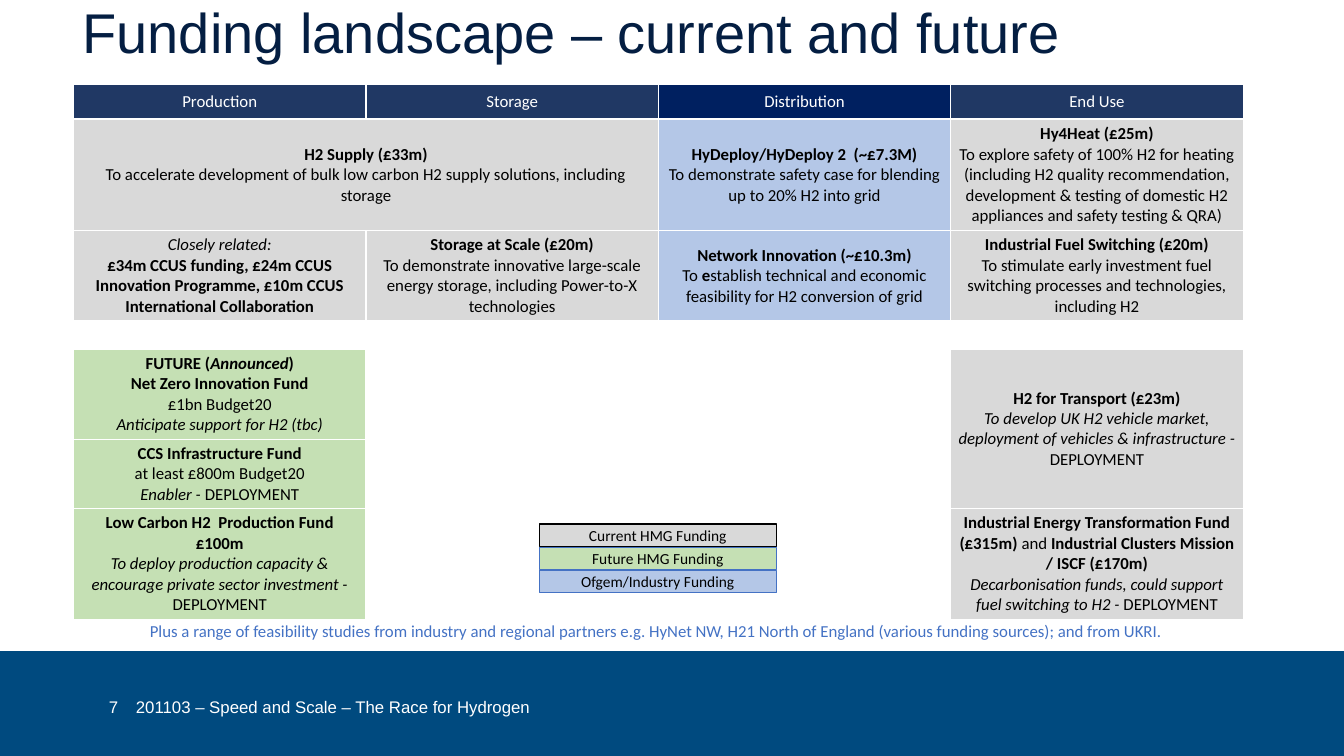
from dataclasses import dataclass
from typing import NamedTuple

from lxml import etree
from pptx import Presentation
from pptx.dml import color
from pptx.enum import shapes, text
from pptx.oxml import ns
from pptx import util as u


@dataclass(frozen=True)
class Theme:
    """Colours, fonts and type sizes of the slide."""
    white: str = "FFFFFF"
    black: str = "000000"
    title: str = "041E42"
    footer: str = "004A7F"
    header: str = "203864"
    header_dark: str = "002060"
    current: str = "D9D9D9"
    future: str = "C5E0B4"
    industry: str = "B4C7E7"
    accent: str = "4472C4"
    heading_font: str = "Arial"
    body_font: str = "Calibri"
    title_size: float = 40
    body_size: float = 12
    legend_size: float = 11


class Span(NamedTuple):
    """A stretch of text in one style."""
    words: str
    bold: bool = False
    italic: bool = False


class Style(NamedTuple):
    """Type settings shared by all text in one box."""
    font: str
    size: float
    colour: str
    align: text.PP_ALIGN = text.PP_ALIGN.CENTER
    anchor: text.MSO_ANCHOR = text.MSO_ANCHOR.MIDDLE


class Area(NamedTuple):
    """Left, top, width and height in inches."""
    left: float
    top: float
    width: float
    height: float


@dataclass(frozen=True)
class Fund:
    """A filled table cell with its paragraphs and spans."""
    row: int
    column: int
    fill: str
    paras: list[list[Span]]
    anchor: text.MSO_ANCHOR = text.MSO_ANCHOR.MIDDLE


class Label(NamedTuple):
    """A line of text outside the table."""
    words: str
    area: Area
    style: Style


class Key(NamedTuple):
    """A legend entry."""
    words: str
    fill: str
    line: str


def bold(words: str) -> Span:
    """Return a bold span."""
    return Span(words, bold=True)


def italic(words: str) -> Span:
    """Return an italic span."""
    return Span(words, italic=True)


THEME = Theme()
LEFT, CENTER, RIGHT = text.PP_ALIGN.LEFT, text.PP_ALIGN.CENTER, text.PP_ALIGN.RIGHT
TOP = text.MSO_ANCHOR.TOP
BREAK = Span("\n")
DEPLOYMENT = Span("DEPLOYMENT")
COLUMN_WIDTH = 2.9
ROW_HEIGHTS = [0.34, 1.11, 0.89, 0.28, 0.88, 0.68, 1.1]
MERGES = [(1, 0, 1, 1), (4, 1, 5, 1), (4, 2, 5, 2), (4, 3, 5, 3)]
HEADER = Style(THEME.body_font, THEME.body_size, THEME.white)
BODY = HEADER._replace(colour=THEME.black)
LEGEND = BODY._replace(size=THEME.legend_size)
FOOTER = Style(THEME.heading_font, THEME.body_size, THEME.white, LEFT)

STAGES = [("Production", THEME.header), ("Storage", THEME.header),
          ("Distribution", THEME.header_dark), ("End Use", THEME.header)]
FUNDS = [
    Fund(1, 0, THEME.current, [[bold("H2 Supply (£33m)")], [Span(
        "To accelerate development of bulk low carbon H2 supply solutions, including storage")]]),
    Fund(1, 2, THEME.industry, [[bold("HyDeploy/HyDeploy 2  (~£7.3M)")], [Span(
        "To demonstrate safety case for blending up to 20% H2 into grid")]]),
    Fund(1, 3, THEME.current, [[bold("Hy4Heat (£25m)")], [Span(
        "To explore safety of 100% H2 for heating (including H2 quality recommendation, "
        "development & testing of domestic H2 appliances and safety testing & QRA)")]]),
    Fund(2, 0, THEME.current, [[italic("Closely related:"), BREAK, bold(
        "£34m CCUS funding, £24m CCUS Innovation Programme, "
        "£10m CCUS International Collaboration")]], TOP),
    Fund(2, 1, THEME.current, [[bold("Storage at Scale (£20m)")], [Span(
        "To demonstrate innovative large-scale energy storage, "
        "including Power-to-X technologies")]], TOP),
    Fund(2, 2, THEME.industry, [[bold("Network Innovation (~£10.3m)")], [
        Span("To"), bold(" e"),
        Span("stablish technical and economic feasibility for H2 conversion of grid")]]),
    Fund(2, 3, THEME.current, [[bold("Industrial Fuel Switching (£20m)")], [Span(
        "To stimulate early investment fuel switching processes and technologies, including H2")]]),
    Fund(4, 0, THEME.future, [
        [bold("FUTURE ("), Span("Announced", True, True), bold(")")],
        [bold("Net Zero Innovation Fund")], [Span("£1bn Budget20")],
        [italic("Anticipate support for H2 (tbc)")]]),
    Fund(4, 3, THEME.current, [[bold("H2 for Transport (£23m)")], [italic(
        "To develop UK H2 vehicle market, deployment of vehicles & infrastructure - "), DEPLOYMENT]]),
    Fund(5, 0, THEME.future, [[bold("CCS Infrastructure Fund")],
                              [Span("at least £800m Budget20")], [italic("Enabler - "), DEPLOYMENT]]),
    Fund(6, 0, THEME.future, [[bold("Low Carbon H2  Production Fund £100m")], [italic(
        "To deploy production capacity & encourage private sector investment - "), DEPLOYMENT]]),
    Fund(6, 3, THEME.current, [
        [bold("Industrial Energy Transformation Fund (£315m) "), Span("and "),
         bold("Industrial Clusters Mission / ISCF (£170m)")],
        [italic("Decarbonisation funds, could support fuel switching to H2 - "), DEPLOYMENT]]),
]
KEYS = [Key("Current HMG Funding", THEME.current, THEME.black),
        Key("Future HMG Funding", THEME.future, THEME.accent),
        Key("Ofgem/Industry Funding", THEME.industry, THEME.accent)]
LABELS = [
    Label("Funding landscape – current and future", Area(0.72, 0, 11.09, 0.71),
          Style(THEME.heading_font, THEME.title_size, THEME.title, LEFT, TOP)),
    Label("Plus a range of feasibility studies from industry and regional partners e.g. HyNet NW, "
          "H21 North of England (various funding sources); and from UKRI.",
          Area(0.72, 6.11, 11.58, 0.3), HEADER._replace(colour=THEME.accent, anchor=TOP)),
    Label("7", Area(0.72, 6.81, 0.55, 0.4), FOOTER._replace(align=RIGHT)),
    Label("201103 – Speed and Scale – The Race for Hydrogen", Area(1.25, 6.81, 4.5, 0.4), FOOTER),
]


def rgb(value: str) -> color.RGBColor:
    """Turn a hex string into a colour."""
    return color.RGBColor.from_string(value)


def write(frame, paras: list[list[Span]], style: Style) -> None:
    """Fill a text frame run by run."""
    frame.word_wrap = True
    frame.vertical_anchor = style.anchor
    for index, spans in enumerate(paras):
        para = frame.add_paragraph() if index else frame.paragraphs[0]
        para.alignment = style.align
        if style.size == THEME.title_size:
            para.line_spacing = 0.9
        for span in spans:
            if span == BREAK:
                para.add_line_break()
                continue
            run = para.add_run()
            run.text = span.words
            run.font.name, run.font.size = style.font, u.Pt(style.size)
            run.font.bold, run.font.italic = span.bold, span.italic
            run.font.color.rgb = rgb(style.colour)


def add_box(page, area: Area, fill: str, line: str | None = None):
    """Draw a filled rectangle."""
    box = page.shapes.add_shape(shapes.MSO_SHAPE.RECTANGLE, *map(u.Inches, area))
    box.shadow.inherit = False
    box.fill.solid()
    box.fill.fore_color.rgb = rgb(fill)
    if line:
        box.line.color.rgb = rgb(line)
        box.line.width = u.Pt(1)
    else:
        box.line.fill.background()
    return box


def add_borders(cell, sides: str) -> None:
    """Give the named sides of a cell a thin white line."""
    properties = cell._tc.get_or_add_tcPr()
    for side in sides:
        line = etree.SubElement(properties, ns.qn(f"a:ln{side}"), w=str(u.Pt(1)))
        fill = etree.SubElement(line, ns.qn("a:solidFill"))
        etree.SubElement(fill, ns.qn("a:srgbClr"), val=THEME.white)


def add_funding_table(page) -> None:
    """Draw the table of funds by stage."""
    area = Area(0.73, 0.84, COLUMN_WIDTH * len(STAGES), sum(ROW_HEIGHTS))
    table = page.shapes.add_table(len(ROW_HEIGHTS), len(STAGES), *map(u.Inches, area)).table
    table.first_row = table.horz_banding = False
    for column in table.columns:
        column.width = u.Inches(COLUMN_WIDTH)
    for row, height in zip(table.rows, ROW_HEIGHTS):
        row.height = u.Inches(height)
    for top, left, bottom, right in MERGES:
        table.cell(top, left).merge(table.cell(bottom, right))
    headers = [Fund(0, column, fill, [[Span(name)]]) for column, (name, fill) in enumerate(STAGES)]
    funds = {(fund.row, fund.column): fund for fund in headers + FUNDS}
    for row in range(len(ROW_HEIGHTS)):
        for column in range(len(STAGES)):
            cell, fund = table.cell(row, column), funds.get((row, column))
            cell.margin_left = cell.margin_right = u.Inches(0.07)
            cell.margin_top = cell.margin_bottom = u.Inches(0.04)
            add_borders(cell, "LRTB" if row else "B")
            if fund:
                cell.fill.solid()
                cell.fill.fore_color.rgb = rgb(fund.fill)
                write(cell.text_frame, fund.paras, BODY if row else HEADER)
                cell.vertical_anchor = fund.anchor
            else:
                cell.fill.background()
                para = cell.text_frame.paragraphs[0]
                etree.SubElement(para._p, ns.qn("a:endParaRPr"), sz=str(THEME.body_size * 100))


def main() -> None:
    """Build and save the slide."""
    deck = Presentation()
    deck.slide_width, deck.slide_height = u.Inches(13.33), u.Inches(7.5)
    page = deck.slides.add_slide(deck.slide_layouts[6])
    add_box(page, Area(0, 6.46, 13.33, 1.04), THEME.footer)
    add_funding_table(page)
    for index, key in enumerate(KEYS):
        box = add_box(page, Area(5.35, 5.2 + 0.23 * index, 2.35, 0.22), key.fill, key.line)
        write(box.text_frame, [[Span(key.words)]], LEGEND)
    for label in LABELS:
        box = page.shapes.add_textbox(*map(u.Inches, label.area))
        write(box.text_frame, [[Span(label.words)]], label.style)
    deck.save("out.pptx")


if __name__ == "__main__":
    main()
